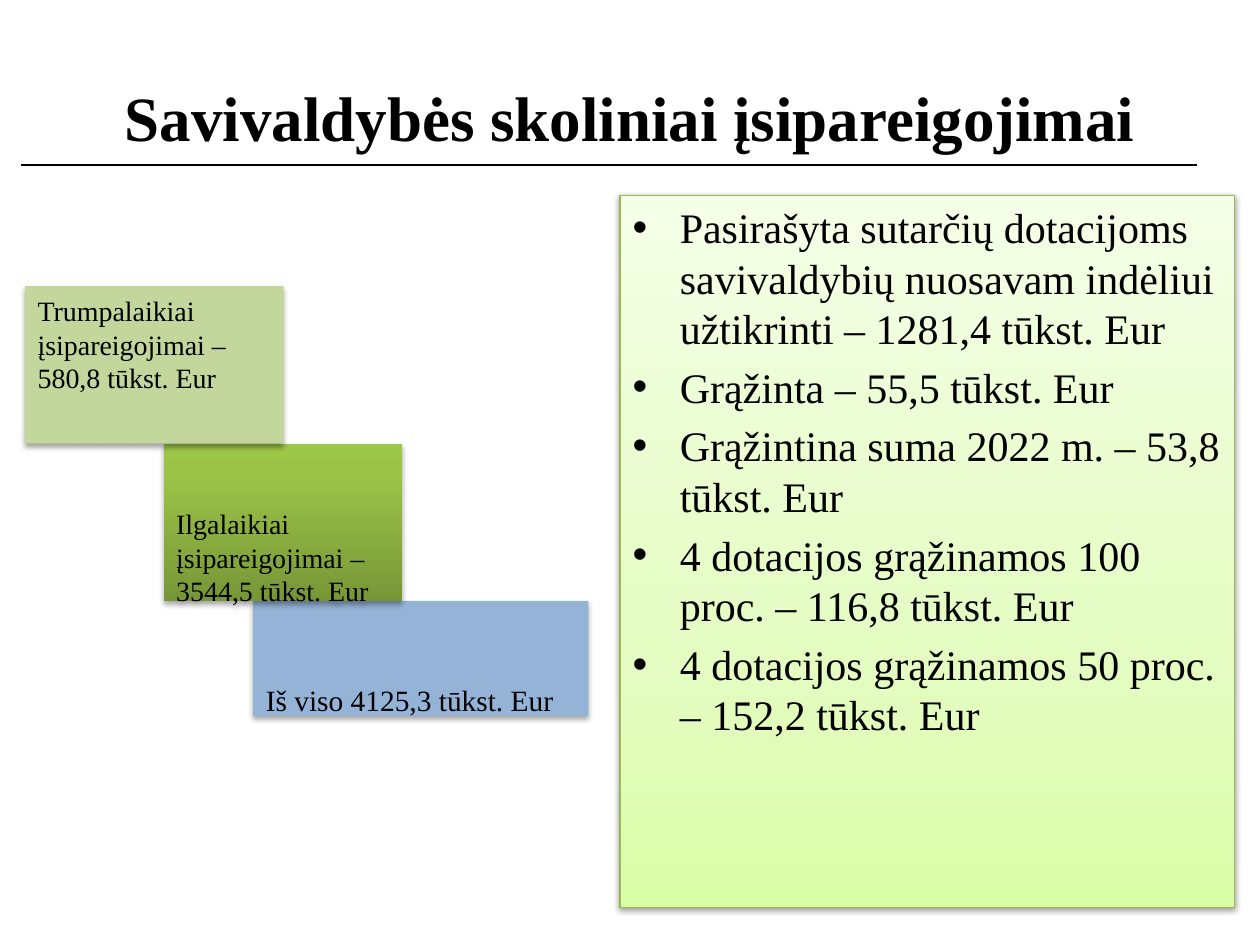
from lxml.etree import SubElement
from pptx import Presentation
from pptx.dml.color import RGBColor
from pptx.enum.shapes import MSO_CONNECTOR, MSO_SHAPE
from pptx.enum.text import MSO_ANCHOR, MSO_AUTO_SIZE, PP_ALIGN
from pptx.oxml.ns import qn
from pptx.util import Inches, Pt

COLORS = {
    "text": "000000",
    "short_term": "C3D69B",
    "total": "95B3D7",
    "list_border": "98B955",
}
LONG_TERM_STOPS = [(0, "779737"), (80, "9BC348"), (100, "9DC746")]
LIST_STOPS = [(0, "DAFDA7"), (35, "E4FCC2"), (100, "F5FFE7")]
GRANTS = [
    "Pasirašyta sutarčių dotacijoms savivaldybių nuosavam indėliui užtikrinti – 1281,4 tūkst. Eur",
    "Grąžinta – 55,5 tūkst. Eur",
    "Grąžintina suma 2022 m. – 53,8 tūkst. Eur",
    "4 dotacijos grąžinamos 100 proc. – 116,8 tūkst. Eur",
    "4 dotacijos grąžinamos 50 proc. – 152,2 tūkst. Eur",
]


def color(name):
    return RGBColor.from_string(COLORS[name])


def place(shape, left, top, width, height):
    shape.left, shape.top = Inches(left), Inches(top)
    shape.width, shape.height = Inches(width), Inches(height)


def fill_solid(shape, name):
    shape.fill.solid()
    shape.fill.fore_color.rgb = color(name)


def fill_gradient(shape, stops):
    shape.fill.gradient()
    shape.fill.gradient_angle = 90
    stop_list = shape._element.spPr.find(qn("a:gradFill")).find(qn("a:gsLst"))
    for stop in list(stop_list):
        stop_list.remove(stop)
    for percent, value in stops:
        stop = SubElement(stop_list, qn("a:gs"), pos=str(percent * 1000))
        SubElement(stop, qn("a:srgbClr"), val=value)


def add_shadow(shape, opacity, distance):
    shape.shadow.inherit = False
    effects = shape._element.spPr.find(qn("a:effectLst"))
    shadow = SubElement(effects, qn("a:outerShdw"), blurRad=str(Pt(3.1)),
                        dist=str(Pt(distance)), dir="5400000", rotWithShape="0")
    shadow_color = SubElement(shadow, qn("a:srgbClr"), val=COLORS["text"])
    SubElement(shadow_color, qn("a:alpha"), val=str(opacity * 1000))


def write_text(shape, lines, size, align=PP_ALIGN.LEFT, bold=False):
    frame = shape.text_frame
    frame.text = "\n".join(lines)
    frame.word_wrap = True
    frame.auto_size = MSO_AUTO_SIZE.NONE
    for paragraph in frame.paragraphs:
        paragraph.alignment = align
        paragraph.font.name = "Times New Roman"
        paragraph.font.size = Pt(size)
        paragraph.font.bold = bold
        paragraph.font.color.rgb = color("text")


def format_box(shape, text, size, top_margin):
    shape.line.fill.background()
    add_shadow(shape, 35, 1.8)
    write_text(shape, [text], size)
    frame = shape.text_frame
    frame.vertical_anchor = MSO_ANCHOR.TOP
    frame.margin_top, frame.margin_bottom = Inches(top_margin), 0
    paragraph = frame.paragraphs[0]
    paragraph.space_before = Pt(0)
    properties = paragraph._element.get_or_add_pPr()
    properties.set("marL", "0")
    properties.set("indent", "0")
    properties.insert_element_before(
        properties.makeelement(qn("a:buNone")), "a:tabLst", "a:defRPr", "a:extLst")


def add_box(slide, left, top, width, height):
    return slide.shapes.add_shape(MSO_SHAPE.RECTANGLE, Inches(left), Inches(top),
                                  Inches(width), Inches(height))


def add_rule(slide, left, right, top):
    rule = slide.shapes.add_connector(MSO_CONNECTOR.STRAIGHT, Inches(left), Inches(top),
                                      Inches(right), Inches(top))
    rule.line.color.rgb = color("text")
    rule.line.width = Pt(0.75)
    SubElement(rule._element.spPr, qn("a:effectLst"))


def format_grants(shape):
    place(shape, 4.92, 1.55, 4.88, 5.65)
    fill_gradient(shape, LIST_STOPS)
    shape.line.color.rgb = color("list_border")
    shape.line.width = Pt(0.75)
    add_shadow(shape, 38, 1.6)
    write_text(shape, GRANTS, 24)


def main():
    presentation = Presentation()
    presentation.slide_width, presentation.slide_height = Inches(10), Inches(7.5)
    slide = presentation.slides.add_slide(presentation.slide_layouts[3])
    title, total, grants = slide.placeholders

    place(title, 0.5, 0.3, 9, 1.25)
    write_text(title, ["Savivaldybės skoliniai įsipareigojimai"], 36, PP_ALIGN.CENTER, True)

    place(total, 2.01, 4.77, 2.66, 0.91)
    fill_solid(total, "total")
    format_box(total, "Iš viso 4125,3 tūkst. Eur", 16.8, 0.64)

    format_grants(grants)
    add_rule(slide, 0.17, 9.5, 1.31)

    long_term = add_box(slide, 1.3, 3.52, 1.89, 1.25)
    fill_gradient(long_term, LONG_TERM_STOPS)
    format_box(long_term, "Ilgalaikiai įsipareigojimai – 3544,5 tūkst. Eur", 16, 0.5)

    short_term = add_box(slide, 0.2, 2.27, 2.05, 1.25)
    fill_solid(short_term, "short_term")
    format_box(short_term, "Trumpalaikiai įsipareigojimai – 580,8 tūkst. Eur", 16, 0.06)

    presentation.save("out.pptx")


if __name__ == "__main__":
    main()
